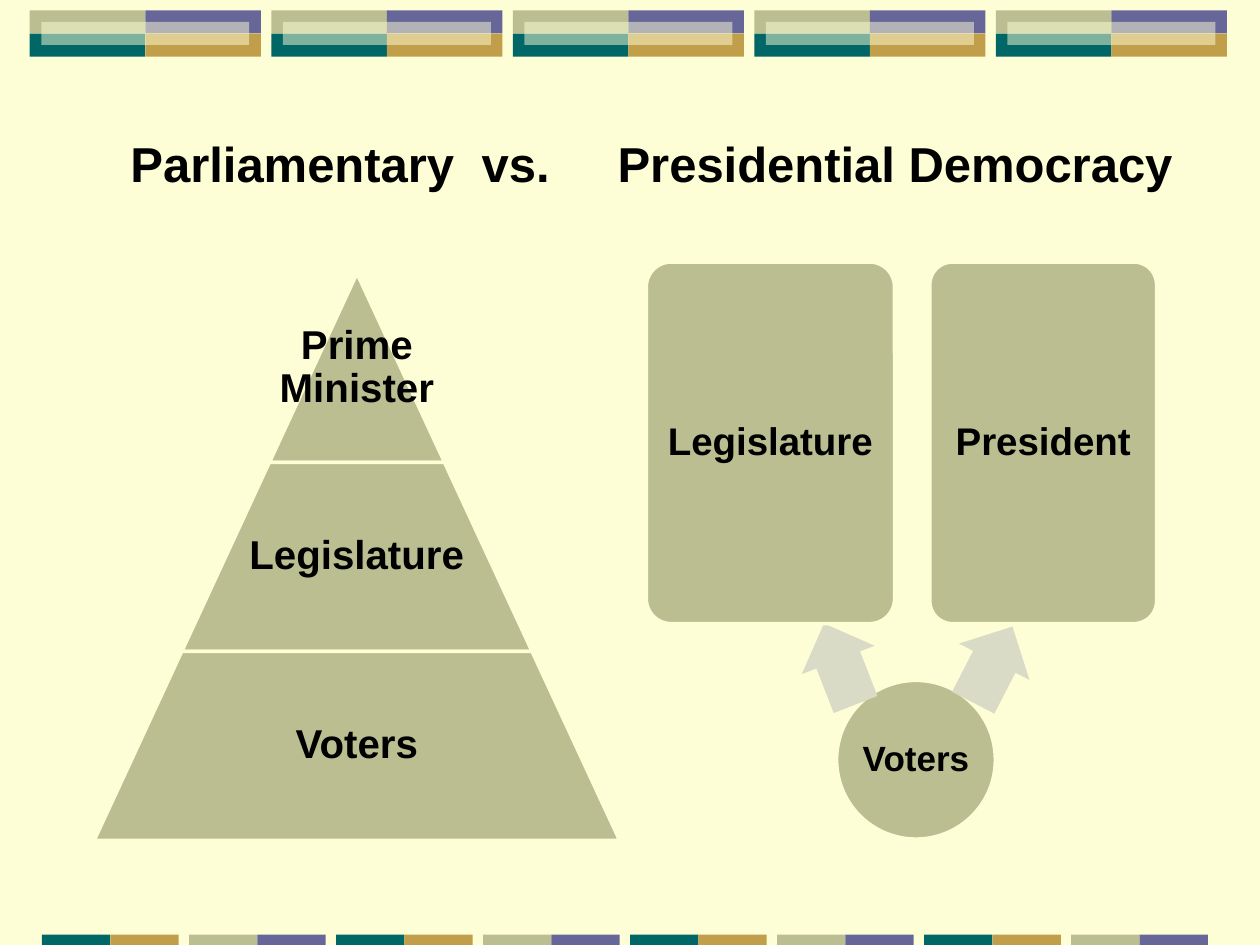
from dataclasses import dataclass

from lxml.etree import SubElement
from pptx import Presentation
from pptx.dml.color import RGBColor
from pptx.enum.shapes import MSO_SHAPE
from pptx.enum.text import MSO_ANCHOR, MSO_AUTO_SIZE, PP_ALIGN
from pptx.oxml.ns import qn
from pptx.util import Inches, Pt


@dataclass(frozen=True)
class Theme:
    """Colours, font and type sizes of the slide."""
    cream: str = "FEFED6"
    sage: str = "BABE90"
    mist: str = "D9DBC6"
    plum: str = "666699"
    gold: str = "C09E4A"
    teal: str = "006666"
    ink: str = "000000"
    font: str = "Arial"
    title: int = 28
    tier: int = 23
    branch: int = 22
    base: int = 20


class Deck:
    """Draws on a grid of 100 columns by 75 rows, 0.1 inch each."""

    def __init__(self, theme):
        self.theme = theme
        self.file = Presentation()
        self.file.slide_width, self.file.slide_height = self.grid(100, 75)
        self.slide = self.file.slides.add_slide(self.file.slide_layouts[5])
        self.paint(self.slide.background.fill, theme.cream)

    def grid(self, *cells):
        return [Inches(cell / 10) for cell in cells]

    def paint(self, fill, color):
        fill.solid()
        fill.fore_color.rgb = RGBColor.from_string(color)

    def apply(self, target, values):
        for name, value in values.items():
            setattr(target, name, value)

    def letter(self, shape, parts, size, inset=0.0, spacing=0.9):
        """Fill a shape with centred text; a number stands for a widened space."""
        frame = shape.text_frame
        pad = Inches(inset)
        self.apply(frame, {
            "word_wrap": True, "auto_size": MSO_AUTO_SIZE.NONE,
            "vertical_anchor": MSO_ANCHOR.MIDDLE,
            "margin_left": pad, "margin_right": pad,
            "margin_top": pad, "margin_bottom": pad})
        line = frame.paragraphs[0]
        self.apply(line, {"alignment": PP_ALIGN.CENTER, "line_spacing": spacing})
        for part in parts:
            run = line.add_run()
            run.text = part if isinstance(part, str) else " "
            self.apply(run.font, {
                "name": self.theme.font, "size": Pt(size), "bold": True})
            run.font.color.rgb = RGBColor.from_string(self.theme.ink)
            if not isinstance(part, str):
                run._r.get_or_add_rPr().set("spc", str(part * 100))

    def title(self, parts, *box):
        shape = self.slide.shapes.title
        self.apply(shape, dict(zip(("left", "top", "width", "height"), self.grid(*box))))
        self.letter(shape, parts, self.theme.title, 0.1, 1.0)

    def shape(self, kind, color, *box, edge=False, adjust=(), turn=0, alpha=None):
        shape = self.slide.shapes.add_shape(kind, *self.grid(*box))
        self.apply(shape, {"rotation": turn})
        shape.shadow.inherit = False
        self.paint(shape.fill, color)
        if edge:
            self.paint(shape.line.fill, self.theme.cream)
            shape.line.width = Pt(2)
        else:
            shape.line.fill.background()
        for index, value in enumerate(adjust):
            shape.adjustments[index] = value
        if alpha:
            tint = shape._element.spPr.find(qn("a:solidFill"))[0]
            SubElement(tint, qn("a:alpha")).set("val", str(alpha * 1000))
        return shape

    def label(self, text, size, *box):
        shape = self.slide.shapes.add_textbox(*self.grid(*box))
        self.letter(shape, [text], size, 0.03)

    def banner(self):
        theme, wide, high = self.theme, 9.17, 1.83
        tiles = ((theme.sage, theme.plum), (theme.teal, theme.gold))
        for block in range(5):
            left, top = 2.36 + 19.17 * block, 0.83
            for row, pair in enumerate(tiles):
                for col, color in enumerate(pair):
                    self.shape(MSO_SHAPE.RECTANGLE, color, left + col * wide,
                               top + row * high, wide, high)
            self.shape(MSO_SHAPE.RECTANGLE, theme.cream, left + wide / 10,
                       top + high / 2, wide * 1.8, high, alpha=50)

    def footer(self):
        theme, wide = self.theme, 5.42
        pairs = ((theme.teal, theme.gold), (theme.sage, theme.plum))
        for block in range(8):
            for col, color in enumerate(pairs[block % 2]):
                self.shape(MSO_SHAPE.RECTANGLE, color,
                           3.33 + 11.67 * block + col * wide, 74.17, wide, 0.83)

    def pyramid(self, names, center, top, step, high):
        for tier, name in enumerate(names, 1):
            wide, row = step * tier, top + high * (tier - 1)
            slope = step / 2 / min(wide, high)
            self.shape(MSO_SHAPE.TRAPEZOID, self.theme.sage, center - wide / 2,
                       row, wide, high, edge=True, adjust=[slope])
            span = step if tier == 1 else wide * 0.65
            self.label(name, self.theme.tier, center - span / 2, row, span, high)

    def node(self, kind, text, size, inset, *box, adjust=()):
        shape = self.shape(kind, self.theme.sage, *box, edge=True, adjust=adjust)
        self.letter(shape, [text], size, inset)

    def arrow(self, turn, *box):
        self.shape(MSO_SHAPE.RIGHT_ARROW, self.theme.mist, *box,
                   adjust=[0.6, 0.5], turn=turn)


def main():
    theme = Theme()
    deck = Deck(theme)
    deck.banner()
    deck.footer()
    deck.title(["Parliamentary", 8, "vs.", 31, "Presidential Democracy"],
               9.2, 6.7, 85, 12.5)
    deck.pyramid(["Prime Minister", "Legislature", "Voters"], 28.33, 21.7, 13.9, 15)
    deck.node(MSO_SHAPE.OVAL, "Voters", theme.base, 0.01, 66.4, 54, 12.6, 12.6)
    deck.arrow(248.7, 63.2, 49.6, 6.9, 6.2)
    deck.arrow(297.3, 75.4, 49.6, 6.8, 6.3)
    for name, left, wide in (("Legislature", 51.3, 19.7), ("President", 73.8, 18)):
        deck.node(MSO_SHAPE.ROUNDED_RECTANGLE, name, theme.branch, 0.05,
                  left, 20.8, wide, 28.7, adjust=[0.1])
    deck.file.save("out.pptx")


if __name__ == "__main__":
    main()
